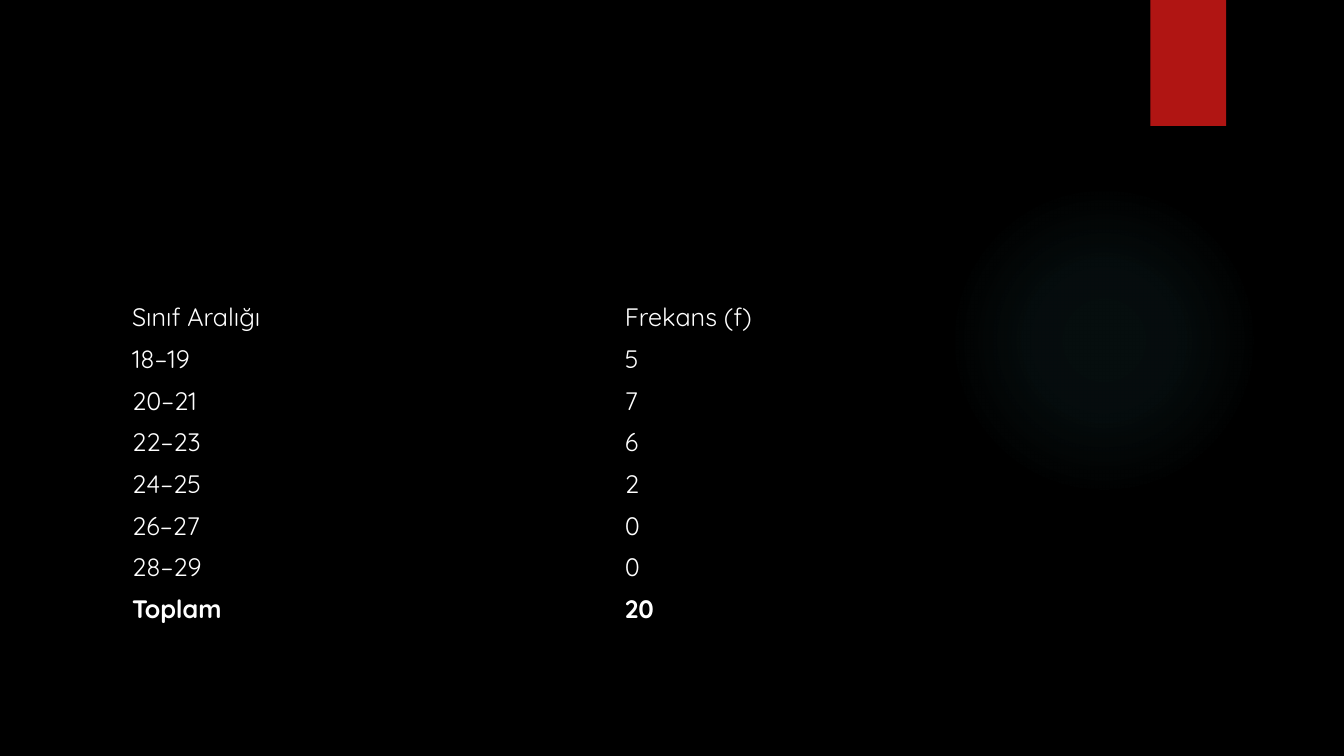
from pptx import Presentation
from pptx.dml.color import RGBColor
from pptx.enum import shapes, text
from pptx.oxml import parse_xml
from pptx.oxml.ns import nsdecls, qn
from pptx.util import Pt

FREQUENCIES = [
    ("Sınıf Aralığı", "Frekans (f)"),
    ("18–19", "5"),
    ("20–21", "7"),
    ("22–23", "6"),
    ("24–25", "2"),
    ("26–27", "0"),
    ("28–29", "0"),
    ("Toplam", "20"),
]
GLOW_STOPS = [(0, 7), (36, 6), (69, 0)]
PLAIN_STYLE = "{2D5ABB26-0587-4C30-8999-92F81FD0307C}"


def paint(fill, color):
    fill.solid()
    fill.fore_color.rgb = RGBColor.from_string(color)


def add_block(slide, kind, left, top, width, height, color):
    sp = slide.shapes.add_shape(kind, Pt(left), Pt(top), Pt(width), Pt(height))
    sp.shadow.inherit = False
    sp.line.fill.background()
    paint(sp.fill, color)
    return sp


def add_glow(slide, left, top, size, color, stops):
    sp = add_block(slide, shapes.MSO_SHAPE.OVAL, left, top, size, size, color)
    gs = "".join(
        f'<a:gs pos="{pos * 1000}"><a:srgbClr val="{color}">'
        f'<a:alpha val="{alpha * 1000}"/></a:srgbClr></a:gs>'
        for pos, alpha in stops
    )
    gradient = parse_xml(
        f'<a:gradFill {nsdecls("a")} rotWithShape="1"><a:gsLst>{gs}</a:gsLst>'
        '<a:path path="circle">'
        '<a:fillToRect l="50000" t="50000" r="50000" b="50000"/>'
        '</a:path></a:gradFill>'
    )
    props = sp._element.spPr
    props.replace(props.find(qn("a:solidFill")), gradient)


def write_cell(cell, content, bold):
    cell.fill.background()
    cell.vertical_anchor = text.MSO_ANCHOR.MIDDLE
    p = cell.text_frame.paragraphs[0]
    p.text = content
    p.font.name = "Quicksand"
    p.font.size = Pt(18)
    p.font.bold = bold
    p.font.color.rgb = RGBColor.from_string("FFFFFF")


def add_table(slide, rows, left, top, width, height):
    frame = slide.shapes.add_table(
        len(rows), len(rows[0]), Pt(left), Pt(top), Pt(width), Pt(height))
    table = frame.table
    table.first_row = False
    table.horz_banding = False
    table._tbl.tblPr.find(qn("a:tableStyleId")).text = PLAIN_STYLE
    for i, row in enumerate(rows):
        for j, content in enumerate(row):
            write_cell(table.cell(i, j), content, i == len(rows) - 1)


def main():
    prs = Presentation()
    prs.slide_width, prs.slide_height = Pt(960), Pt(540)
    slide = prs.slides.add_slide(prs.slide_layouts[6])
    paint(slide.background.fill, "000000")
    add_glow(slide, 677.5, 131.8, 221.8, "50B9C1", GLOW_STOPS)
    add_block(slide, shapes.MSO_SHAPE.RECTANGLE, 821.8, 0, 54, 90, "B01513")
    add_table(slide, FREQUENCIES, 87.1, 211.7, 704.2, 230.4)
    prs.save("out.pptx")


if __name__ == "__main__":
    main()
